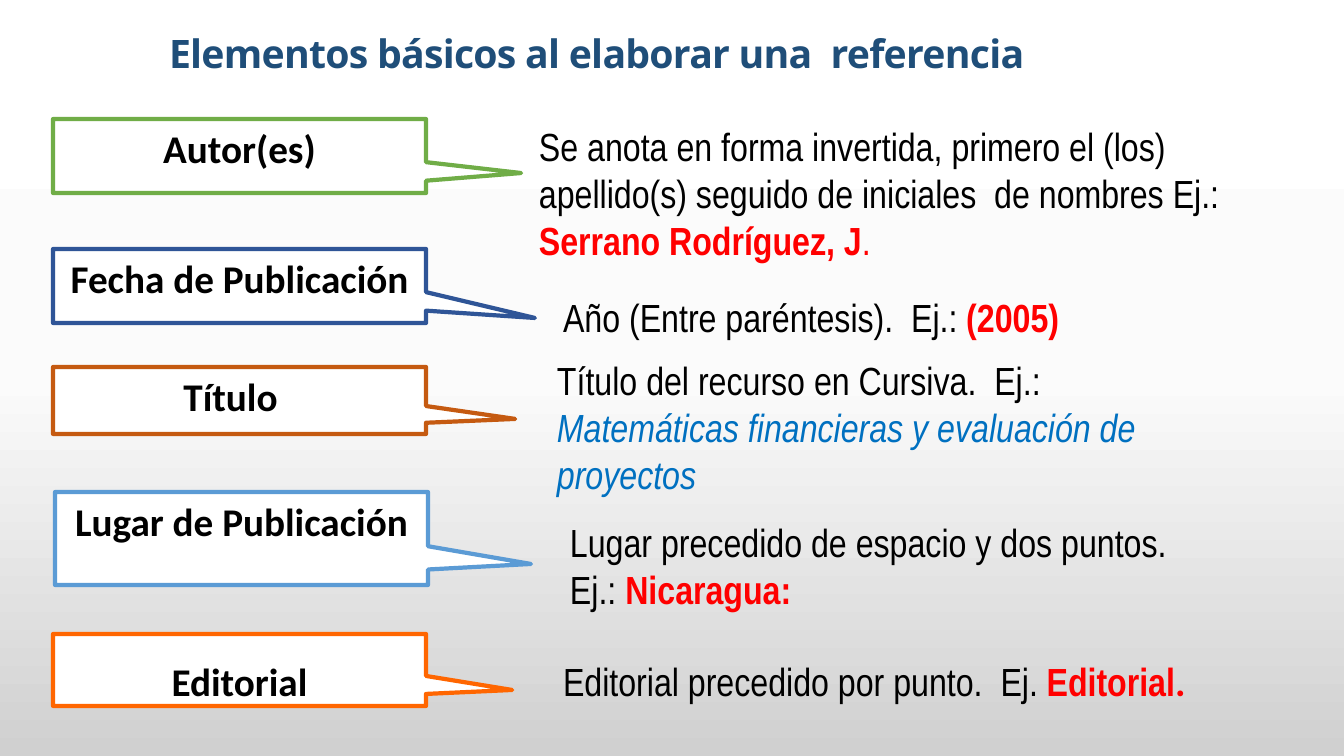
from copy import deepcopy

from pptx import Presentation
from pptx.dml.color import RGBColor
from pptx.enum.shapes import MSO_SHAPE
from pptx.enum.text import MSO_ANCHOR, PP_ALIGN
from pptx.util import Pt

SCALE = 12192000 / 1344
CALLOUT = MSO_SHAPE.RECTANGULAR_CALLOUT
TOP = MSO_ANCHOR.TOP
LEFT, CENTER = PP_ALIGN.LEFT, PP_ALIGN.CENTER
BLACK, RED, BLUE = "000000", "FF0000", "0070C0"


def px(length):
    return round(length * SCALE)


def colour(value):
    return RGBColor.from_string(value)


def add_span(para, text, font="Arial Narrow", color=BLACK, bold=False, italic=False, spacing=0):
    span = para.add_run()
    span.text = text
    span.font.name = font
    span.font.size = Pt(28)
    span.font.bold = bold
    span.font.italic = italic
    span.font.color.rgb = colour(color)
    if spacing:
        span.font._element.set("spc", str(spacing))


class ReferenceSlide:
    body_font = "Calibri"
    title_font = "Open Sans"

    def __init__(self, deck):
        self.page = deck.slides.add_slide(deck.slide_layouts[5])

    def background(self, stops):
        fill = self.page.background.fill
        fill.gradient()
        fill.gradient_angle = 270
        stop_list = self.page._element.xpath(".//a:gsLst")[0]
        while len(stop_list) < len(stops):
            stop_list.append(deepcopy(stop_list[0]))
        for stop, (position, value) in zip(fill.gradient_stops, stops):
            stop.position = position
            stop.color.rgb = colour(value)

    def frame(self, box, align=LEFT, line_spacing=1.0, vertical=5, right=10):
        frame = box.text_frame
        frame.word_wrap = True
        frame.vertical_anchor = TOP
        frame.margin_left, frame.margin_right = px(10), px(right)
        frame.margin_top = frame.margin_bottom = px(vertical)
        para = frame.paragraphs[0]
        para.alignment = align
        para.line_spacing = line_spacing
        return para

    def title(self, text, left, top, width, height):
        box = self.page.shapes.title
        box.left, box.top, box.width, box.height = map(px, (left, top, width, height))
        para = self.frame(box, line_spacing=0.8, vertical=4)
        add_span(para, text, font=self.title_font, color="1F4E79", bold=True, spacing=-50)

    def callout(self, text, area, tip, line, line_spacing=1.0, right=10):
        left, top, width, height = area
        box = self.page.shapes.add_shape(CALLOUT, *map(px, area))
        box.shadow.inherit = False
        box.adjustments[0] = round((tip[0] - left) / width - 0.5, 3)
        box.adjustments[1] = round((tip[1] - top) / height - 0.5, 3)
        box.fill.solid()
        box.fill.fore_color.rgb = colour("FFFFFF")
        box.line.color.rgb = colour(line)
        box.line.width = Pt(3)
        para = self.frame(box, CENTER, line_spacing, right=right)
        add_span(para, text, font=self.body_font, bold=True)

    def description(self, area, spans):
        box = self.page.shapes.add_textbox(*map(px, area))
        para = self.frame(box)
        for text, style in spans:
            add_span(para, text, **style)


EXAMPLE = {"color": RED, "bold": True}

CALLOUTS = [
    ("Autor(es)", (53, 119, 373, 74), (521, 173), "70AD47", {}),
    ("Fecha de Publicación", (53, 249, 373, 74), (535, 318), "2F5597", {}),
    ("Título", (53, 367, 373, 67), (515, 419), "C55A11", {"right": 28}),
    ("Lugar de Publicación", (55, 492, 373, 93), (531, 564), "5B9BD5", {}),
    ("Editorial", (53, 634, 373, 72), (512, 690), "FF6600", {"line_spacing": 1.4}),
]

DESCRIPTIONS = [
    ((529, 117, 783, 152), [
        ("Se anota en forma invertida, primero el (los) apellido(s) seguido de iniciales  de nombres Ej.: ", {}),
        ("Serrano Rodríguez, J", EXAMPLE),
        (".", {"color": RED}),
    ]),
    ((553, 288, 573, 57), [
        ("Año (Entre paréntesis).  Ej.: ", {}),
        ("(2005)", EXAMPLE),
    ]),
    ((547, 351, 666, 201), [
        ("Título del recurso en Cursiva.  Ej.: ", {}),
        ("Matemáticas financieras y evaluación de proyectos", {"color": BLUE, "italic": True}),
    ]),
    ((560, 513, 665, 105), [
        ("Lugar precedido de espacio y dos puntos. Ej.: ", {}),
        ("Nicaragua:", EXAMPLE),
    ]),
    ((553, 652, 667, 57), [
        ("Editorial precedido por punto.  Ej. ", {}),
        ("Editorial", EXAMPLE),
        (".", {**EXAMPLE, "font": "Calibri"}),
    ]),
]


def main():
    deck = Presentation()
    deck.slide_width, deck.slide_height = px(1344), px(756)
    slide = ReferenceSlide(deck)
    slide.background([(0, "FFFFFF"), (0.5, "FBFBFB"), (1, "D0D0D0")])
    slide.title("Elementos básicos al elaborar una  referencia", 159, 34, 915, 48)
    for text, area, tip, line, style in CALLOUTS:
        slide.callout(text, area, tip, line, **style)
    for area, spans in DESCRIPTIONS:
        slide.description(area, spans)
    deck.save("out.pptx")


if __name__ == "__main__":
    main()
